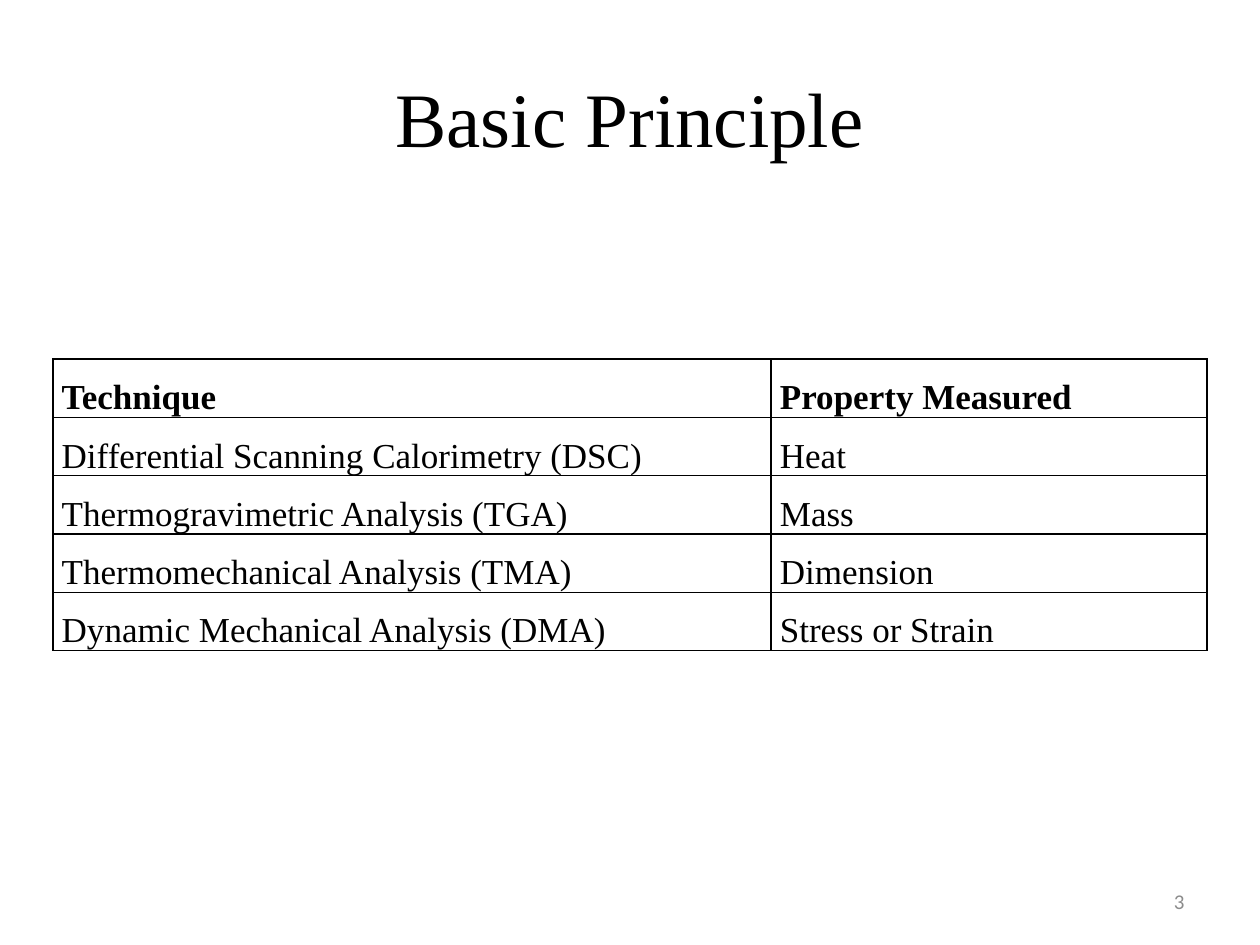
from lxml import etree
from pptx import Presentation
from pptx.dml.color import RGBColor
from pptx.enum.text import MSO_ANCHOR, PP_ALIGN
from pptx.oxml.ns import qn
from pptx.util import Inches, Pt

CENTER, RIGHT, JUSTIFY = PP_ALIGN.CENTER, PP_ALIGN.RIGHT, PP_ALIGN.JUSTIFY
MIDDLE = MSO_ANCHOR.MIDDLE
TITLE_ONLY = 5
COLORS = {"text": "000000", "border": "000000", "number": "8C8C8C"}
SERIF, SANS = "Times New Roman", "Calibri"

TECHNIQUES = [
    ("Technique", "Property Measured"),
    ("Differential Scanning Calorimetry (DSC)", "Heat"),
    ("Thermogravimetric Analysis (TGA)", "Mass"),
    ("Thermomechanical Analysis (TMA)", "Dimension"),
    ("Dynamic Mechanical Analysis (DMA)", "Stress or Strain"),
]


class SlideBuilder:
    def __init__(self, prs):
        self.s = prs.slides.add_slide(prs.slide_layouts[TITLE_ONLY])

    def add_text(self, tf, text, size, align, font=SERIF, color="text", bold=False):
        p = tf.paragraphs[0]
        p.alignment = align
        r = p.add_run()
        r.text = text
        r.font.name, r.font.size, r.font.bold = font, Pt(size), bold
        r.font.color.rgb = RGBColor.from_string(COLORS[color])
        return p

    def title(self, text, x, y, w, h):
        sp = self.s.shapes.title
        sp.left, sp.top, sp.width, sp.height = map(Inches, (x, y, w, h))
        sp.text_frame.vertical_anchor = MIDDLE
        self.add_text(sp.text_frame, text, 44, CENTER)

    def text(self, text, x, y, w, h, size, align, font, color):
        sp = self.s.shapes.add_textbox(*map(Inches, (x, y, w, h)))
        tf = sp.text_frame
        tf.word_wrap = True
        tf.vertical_anchor = MIDDLE
        self.add_text(tf, text, size, align, font, color)

    def borders(self, cell):
        tc_pr = cell._tc.get_or_add_tcPr()
        for i, side in enumerate(("lnL", "lnR", "lnT", "lnB")):
            ln = etree.Element(qn(f"a:{side}"), w=str(Pt(1)))
            fill = etree.SubElement(ln, qn("a:solidFill"))
            etree.SubElement(fill, qn("a:srgbClr"), val=COLORS["border"])
            tc_pr.insert(i, ln)

    def table(self, rows, x, y, col_widths, row_height):
        frame = self.s.shapes.add_table(
            len(rows), len(col_widths), Inches(x), Inches(y),
            Inches(sum(col_widths)), Inches(row_height * len(rows)))
        table = frame.table
        table.horz_banding = False
        table.first_row = False
        for col, width in zip(table.columns, col_widths):
            col.width = Inches(width)
        for i, values in enumerate(rows):
            for j, value in enumerate(values):
                cell = table.cell(i, j)
                cell.fill.background()
                cell.margin_left = cell.margin_right = Inches(0.07)
                cell.margin_top = cell.margin_bottom = 0
                p = self.add_text(cell.text_frame, value, 20, JUSTIFY, bold=i == 0)
                p.line_spacing = 1.5
                self.borders(cell)


def main():
    prs = Presentation()
    prs.slide_width, prs.slide_height = Inches(10), Inches(7.5)
    slide = SlideBuilder(prs)

    # Title
    slide.title("Basic Principle", 0.5, 0.3, 9, 1.25)

    # Techniques and what they measure
    slide.table(TECHNIQUES, 0.42, 2.85, (5.7, 3.46), 0.46)

    # Slide number
    slide.text("3", 7.17, 6.95, 2.33, 0.4, 12, RIGHT, SANS, "number")

    prs.save("out.pptx")


if __name__ == "__main__":
    main()
